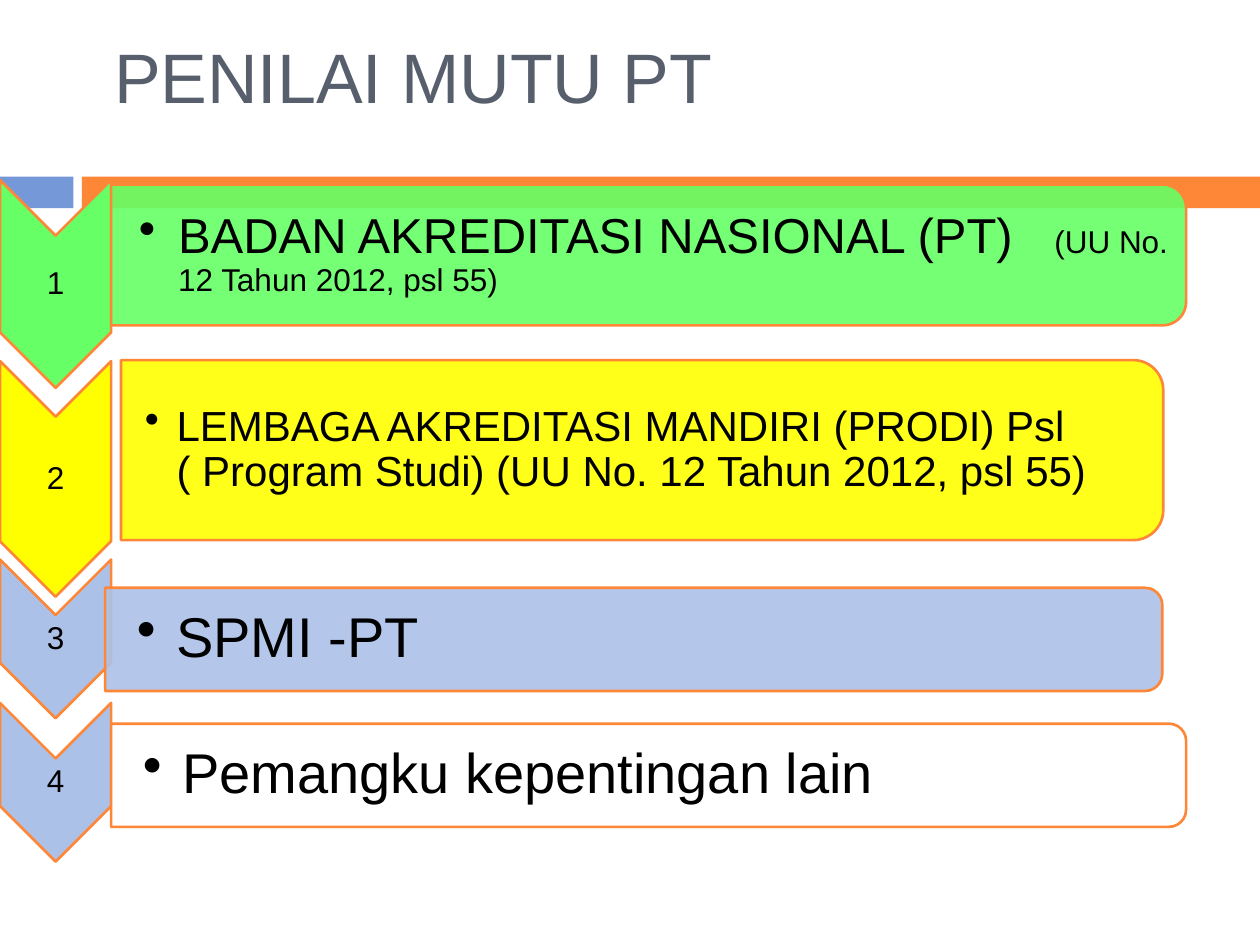
"""Build the slide listing the four quality assessors of higher education."""
from lxml import etree
from pptx import Presentation
from pptx import util as u
from pptx.dml import color
from pptx.enum import shapes, text
from pptx.oxml import ns

COLORS = {"blue": "7598D9", "orange": "FE8637", "title": "575F6D", "black": "000000",
          "green": "66FF66", "yellow": "FFFF00", "pale": "ACC1E8", "white": "FFFFFF"}
RGB = {k: color.RGBColor.from_string(v) for k, v in COLORS.items()}
KIND = shapes.MSO_SHAPE
ALIGN = text.PP_ALIGN
ANCHOR = text.MSO_ANCHOR


def add_block(kind, x, y, w, h, fill, turned=False, alpha=None):
    if turned:
        x, y, w, h = x + (w - h) / 2, y + (h - w) / 2, h, w
    s = sl.shapes.add_shape(kind, u.Cm(x), u.Cm(y), u.Cm(w), u.Cm(h))
    s.shadow.inherit = False
    s.fill.solid()
    s.fill.fore_color.rgb = RGB[fill]
    if alpha:
        clr = s._element.spPr.find(ns.qn("a:solidFill")).find(ns.qn("a:srgbClr"))
        etree.SubElement(clr, ns.qn("a:alpha")).set("val", str(alpha * 1000))
    if turned:
        s.rotation = 90
        s.line.color.rgb = RGB["orange"]
        s.line.width = u.Pt(1.5)
    else:
        s.line.fill.background()


def add_text(x, y, w, h, runs, frame, para, ink="black"):
    tf = sl.shapes.add_textbox(u.Cm(x), u.Cm(y), u.Cm(w), u.Cm(h)).text_frame
    p = tf.paragraphs[0]
    for obj, fmt in ((tf, {"word_wrap": True, **frame}), (p, para)):
        for name, value in fmt.items():
            setattr(obj, name, value)
    for words, size, gap in runs:
        r = p.add_run()
        r.text = words
        for name, value in {"name": "Arial", "size": u.Pt(size)}.items():
            setattr(r.font, name, value)
        r.font.color.rgb = RGB[ink]
        if gap:
            r._r.get_or_add_rPr().set("spc", str(gap * 100))
    return p


prs = Presentation()
prs.slide_width, prs.slide_height = u.Cm(25.4), u.Cm(19.05)
sl = prs.slides.add_slide(prs.slide_layouts[6])

add_block(KIND.RECTANGLE, 0, 3.56, 1.48, 0.64, "blue")
add_block(KIND.RECTANGLE, 1.65, 3.56, 23.75, 0.64, "orange")
add_text(1.7, 0.64, 22.66, 2.74, [("PENILAI MUTU PT", 40, 0)],
         {"vertical_anchor": ANCHOR.TOP, "margin_left": u.Cm(0.6), "margin_top": u.Cm(0.03)},
         {"alignment": ALIGN.LEFT}, "title")

CHEVRON_W = 2.24
EDGE = u.Cm(0.03)
NUMBER_FRAME = {"vertical_anchor": ANCHOR.MIDDLE, "margin_left": EDGE, "margin_right": EDGE,
                "margin_top": EDGE, "margin_bottom": EDGE}
ROWS = [
    ("green", "green", (3.63, 4.19), (2.24, 3.72, 21.67, 2.84), 0.79,
     [("BADAN AKREDITASI NASIONAL (PT)", 28, 0), (" ", 28, 16),
      ("(UU No. 12 Tahun 2012, psl 55)", 18, 0)]),
    ("yellow", "yellow", (7.28, 4.75), (2.44, 7.26, 21.01, 3.63), 0.64,
     [("LEMBAGA AKREDITASI MANDIRI (PRODI) Psl ( Program Studi) "
       "(UU No. 12 Tahun 2012, psl 55)", 24, 0)]),
    ("pale", "pale", (11.28, 3.2), (2.12, 11.85, 21.31, 2.08), 0.79, [("SPMI -PT", 32, 0)]),
    ("pale", "white", (14.17, 3.2), (2.24, 14.59, 21.67, 2.08), 0.79,
     [("Pemangku kepentingan lain", 32, 0)]),
]

for number, (chevron, bar, (top, tall), (x, y, w, h), indent, runs) in enumerate(ROWS, 1):
    add_block(KIND.CHEVRON, 0, top, CHEVRON_W, tall, chevron, turned=True)
    add_text(0, top + CHEVRON_W / 2, CHEVRON_W, tall - CHEVRON_W, [(str(number), 18, 0)],
             NUMBER_FRAME, {"alignment": ALIGN.CENTER, "line_spacing": 0.9})
    add_block(KIND.ROUND_2_SAME_RECTANGLE, x, y, w, h, bar, turned=True, alpha=90)
    pad = 0.05 * h
    p = add_text(x, y + pad, w - pad, h - 2 * pad, runs,
                 {**NUMBER_FRAME, "margin_left": u.Cm(0.02 * runs[0][1])},
                 {"alignment": ALIGN.LEFT, "line_spacing": 0.9})
    pPr = p._p.get_or_add_pPr()
    pPr.set("marL", str(u.Cm(indent)))
    pPr.set("indent", str(-u.Cm(indent)))
    etree.SubElement(pPr, ns.qn("a:buChar")).set("char", "•")

prs.save("out.pptx")
